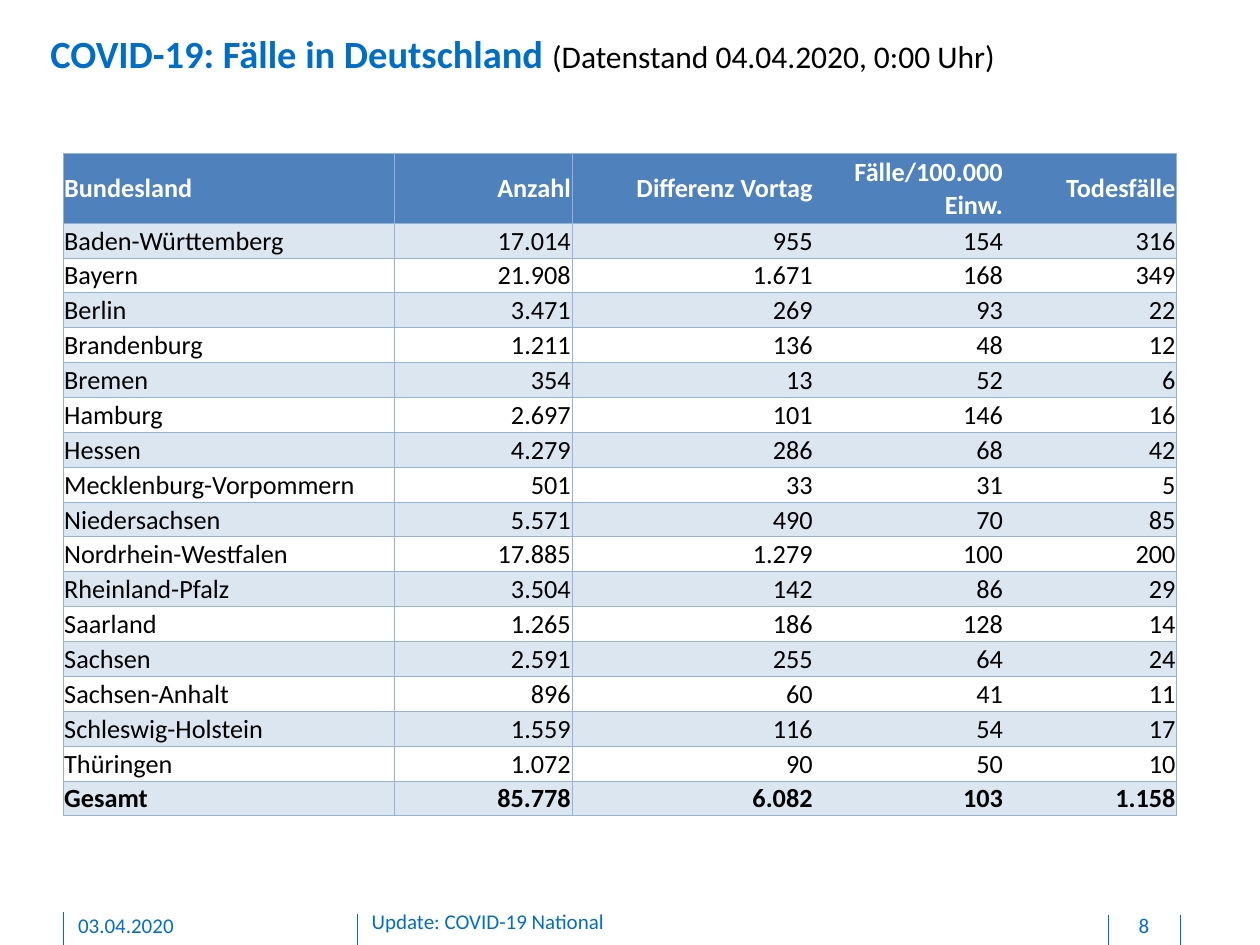
from typing import NamedTuple

from lxml.etree import SubElement
from pptx import Presentation
from pptx.dml.color import RGBColor
from pptx.enum.shapes import MSO_CONNECTOR as Connector
from pptx.enum.text import MSO_ANCHOR as Anchor, PP_ALIGN as Align
from pptx.oxml.ns import qn
from pptx.util import Inches, Pt

FONT = "Calibri"
BLUE = "006EC7"
BLACK = "000000"
WHITE = "FFFFFF"
HEADER_FILL = "4F81BD"
BAND_FILL = "DCE6F1"
BORDER = "95B3D7"
PLAIN_STYLE = "{2D5ABB26-0587-4C30-8999-92F81FD0307C}"


class FooterText(NamedTuple):
    text: str
    left: float
    top: float
    width: float
    align: Align


class FooterRule(NamedTuple):
    x: float
    top: float


class StateRow(NamedTuple):
    state: str
    cases: str
    change: str
    rate: str
    deaths: str


FOOTER_TEXTS = [
    FooterText("03.04.2020", 0.62, 7.24, 2.03, Align.LEFT),
    FooterText("Update: COVID-19 National", 2.95, 7.21, 5.67, Align.LEFT),
    FooterText("8", 8.81, 7.24, 0.54, Align.CENTER),
]
FOOTER_RULES = [
    FooterRule(2.84, 7.25),
    FooterRule(0.5, 7.24),
    FooterRule(9.37, 7.26),
    FooterRule(8.8, 7.26),
]
ROWS = [
    StateRow("Bundesland", "Anzahl", "Differenz Vortag", "Fälle/100.000 Einw.", "Todesfälle"),
    StateRow("Baden-Württemberg", "17.014", "955", "154", "316"),
    StateRow("Bayern", "21.908", "1.671", "168", "349"),
    StateRow("Berlin", "3.471", "269", "93", "22"),
    StateRow("Brandenburg", "1.211", "136", "48", "12"),
    StateRow("Bremen", "354", "13", "52", "6"),
    StateRow("Hamburg", "2.697", "101", "146", "16"),
    StateRow("Hessen", "4.279", "286", "68", "42"),
    StateRow("Mecklenburg-Vorpommern", "501", "33", "31", "5"),
    StateRow("Niedersachsen", "5.571", "490", "70", "85"),
    StateRow("Nordrhein-Westfalen", "17.885", "1.279", "100", "200"),
    StateRow("Rheinland-Pfalz", "3.504", "142", "86", "29"),
    StateRow("Saarland", "1.265", "186", "128", "14"),
    StateRow("Sachsen", "2.591", "255", "64", "24"),
    StateRow("Sachsen-Anhalt", "896", "60", "41", "11"),
    StateRow("Schleswig-Holstein", "1.559", "116", "54", "17"),
    StateRow("Thüringen", "1.072", "90", "50", "10"),
    StateRow("Gesamt", "85.778", "6.082", "103", "1.158"),
]
COLUMN_WIDTHS = [2.63, 1.41, 1.92, 1.51, 1.37]
HEADER_HEIGHT = 0.55
ROW_HEIGHT = 0.277


def rgb(value: str) -> RGBColor:
    return RGBColor.from_string(value)


def add_span(para, text: str, size: float, color: str, bold: bool = False) -> None:
    span = para.add_run()
    span.text = text
    span.font.name = FONT
    span.font.size = Pt(size)
    span.font.bold = bold
    span.font.color.rgb = rgb(color)


def set_margins(frame, bottom: float = 0) -> None:
    frame.margin_left = frame.margin_top = frame.margin_right = 0
    frame.margin_bottom = Inches(bottom)


def fill_title(title) -> None:
    title.left, title.top = Inches(0.4), Inches(0.24)
    title.width, title.height = Inches(8.85), Inches(0.37)
    frame = title.text_frame
    set_margins(frame)
    frame.vertical_anchor = Anchor.MIDDLE
    para = frame.paragraphs[0]
    para.alignment = Align.LEFT
    add_span(para, "COVID-19: Fälle in Deutschland ", 22, BLUE, True)
    add_span(para, "(Datenstand 04.04.2020, 0:00 Uhr)", 18, BLACK)


def add_footer_rule(page, rule: FooterRule) -> None:
    x = Inches(rule.x)
    line = page.shapes.add_connector(Connector.STRAIGHT, x, Inches(rule.top), x, Inches(7.5))
    line.line.color.rgb = rgb(BLUE)
    line.line.width = Pt(0.5)
    SubElement(line._element.spPr, qn("a:effectLst"))


def add_footer_text(page, item: FooterText) -> None:
    box = page.shapes.add_textbox(
        Inches(item.left), Inches(item.top), Inches(item.width), Inches(0.21)
    )
    frame = box.text_frame
    frame.word_wrap = True
    set_margins(frame, 0.05)
    para = frame.paragraphs[0]
    para.alignment = item.align
    add_span(para, item.text, 12, BLUE)


def add_border(cell, side: str) -> None:
    line = SubElement(cell._tc.get_or_add_tcPr(), qn(f"a:ln{side}"), w=str(Pt(0.5)))
    SubElement(SubElement(line, qn("a:solidFill")), qn("a:srgbClr"), val=BORDER)


def border_sides(column: int) -> str:
    if column == 0:
        return "LRTB"
    if column == 1:
        return "LTB"
    return "RTB" if column == len(COLUMN_WIDTHS) - 1 else "TB"


def fill_cell(cell, text: str, row: int, column: int) -> None:
    header = row == 0
    cell.margin_left = cell.margin_right = cell.margin_top = Inches(0.01)
    cell.margin_bottom = 0
    cell.vertical_anchor = Anchor.MIDDLE
    for side in border_sides(column):
        add_border(cell, side)
    if header or row % 2:
        cell.fill.solid()
        cell.fill.fore_color.rgb = rgb(HEADER_FILL if header else BAND_FILL)
    else:
        cell.fill.background()
    para = cell.text_frame.paragraphs[0]
    para.alignment = Align.RIGHT if column else Align.LEFT
    bold = row in (0, len(ROWS) - 1)
    add_span(para, text, 15, WHITE if header else BLACK, bold)


def add_case_table(page) -> None:
    height = HEADER_HEIGHT + ROW_HEIGHT * (len(ROWS) - 1)
    frame = page.shapes.add_table(
        len(ROWS), len(COLUMN_WIDTHS),
        Inches(0.5), Inches(1.22), Inches(sum(COLUMN_WIDTHS)), Inches(height),
    )
    table = frame.table
    table._tbl.tblPr.find(qn("a:tableStyleId")).text = PLAIN_STYLE
    table.horz_banding = False
    for column, width in zip(table.columns, COLUMN_WIDTHS):
        column.width = Inches(width)
    for row, record in enumerate(ROWS):
        table.rows[row].height = Inches(ROW_HEIGHT if row else HEADER_HEIGHT)
        for column, text in enumerate(record):
            fill_cell(table.cell(row, column), text, row, column)


def main() -> None:
    deck = Presentation()
    deck.slide_width, deck.slide_height = Inches(10), Inches(7.5)
    page = deck.slides.add_slide(deck.slide_layouts[5])
    for rule in FOOTER_RULES:
        add_footer_rule(page, rule)
    fill_title(page.shapes.title)
    for item in FOOTER_TEXTS:
        add_footer_text(page, item)
    add_case_table(page)
    deck.save("out.pptx")


if __name__ == "__main__":
    main()
